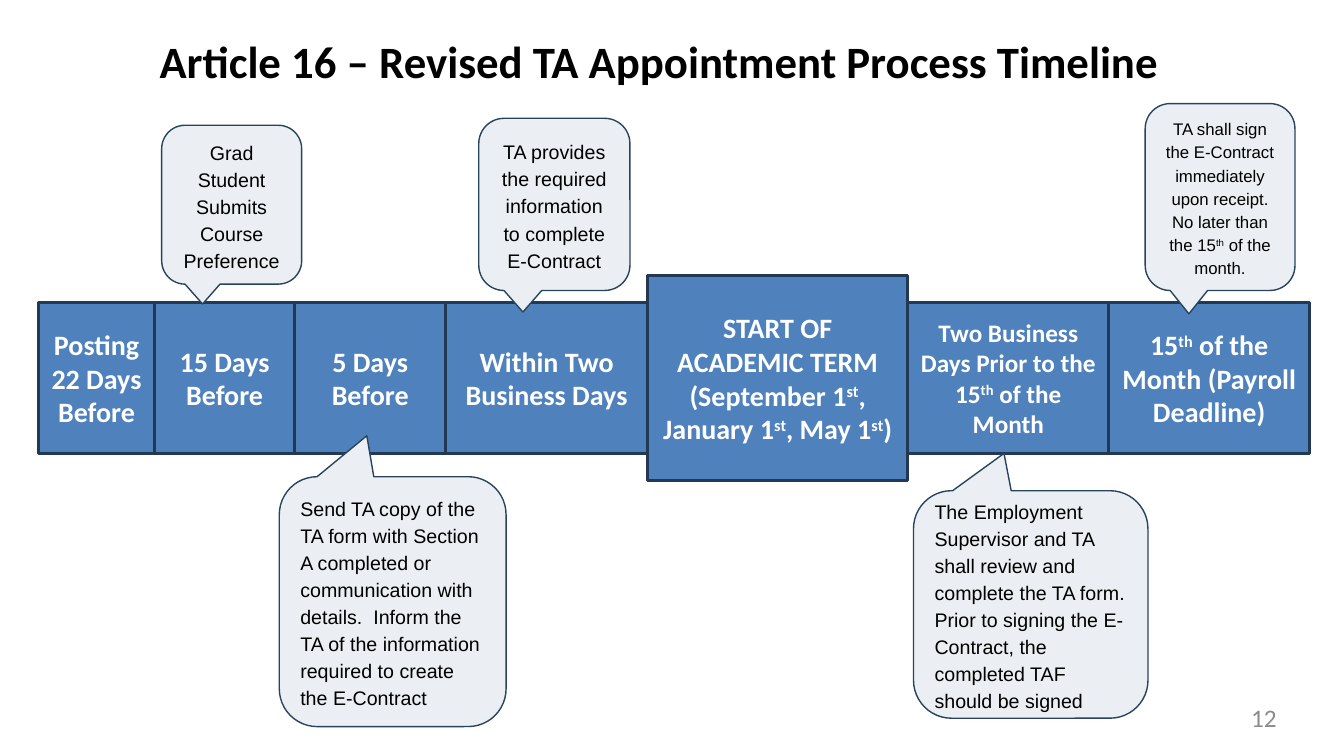
from pptx import Presentation
from pptx.dml.color import RGBColor
from pptx.enum import shapes, text
from pptx.util import Pt

COLORS = {
    "stage": "4F81BD", "stage_line": "233953", "stage_text": "FFFFFF",
    "callout": "EBEEF2", "callout_line": "28445D", "ink": "000000", "number": "8C8C8C",
}
ROW_LEFT, ROW_TOP, ROW_HEIGHT = 27.5, 216, 108
STAGES = [
    (83, 0, 20, ["Posting 22 Days Before"]),
    (100, 0, 20, ["15 Days Before"]),
    (108, 0, 20, ["5 Days Before"]),
    (144, 0, 20, ["Within Two Business Days"]),
    (186, 19, 20, ["START OF ACADEMIC TERM", "(September 1^st^, January 1^st^, May 1^st^)"]),
    (143.5, 0, 18, ["Two Business Days Prior to the 15^th^ of the Month"]),
    (143.5, 0, 20, ["15^th^ of the Month (Payroll Deadline)"]),
]
ABOVE, BELOW = (-0.208, 0.625, 0.167), (-0.114, -0.664, 0.167)
CENTER, LEFT = text.PP_ALIGN.CENTER, text.PP_ALIGN.LEFT
CALLOUTS = [
    ((115.5, 89.5, 100, 113.5), ABOVE, CENTER, 14, 8, "Grad Student Submits Course Preference"),
    ((199.5, 340.5, 162, 178.5), BELOW, LEFT, 14, 8,
     "Send TA copy of the TA form with Section A completed or communication with details.  "
     "Inform the TA of the information required to create the E-Contract"),
    ((342, 84.5, 108, 123), ABOVE, CENTER, 14, 10,
     "TA provides the required information to complete E-Contract"),
    ((652.5, 350.5, 167.5, 162.5), BELOW, LEFT, 14, 8,
     "The Employment Supervisor and TA shall review and complete the TA form. "
     "Prior to signing the E-Contract, the completed TAF should be signed"),
    ((818, 74, 107, 133.5), ABOVE, CENTER, 12, 8,
     "TA shall sign the E-Contract immediately upon receipt. "
     "No later than the 15^th^ of the month."),
]


def style_font(font, name, size, color, bold=False):
    """Set the face, size, colour and weight of a font."""
    font.name, font.size, font.bold = name, Pt(size), bold
    font.color.rgb = RGBColor.from_string(COLORS[color])


def write_paragraph(paragraph, content, alignment, *style):
    """Write text in which carets enclose superscripts."""
    paragraph.alignment = alignment
    for index, part in enumerate(content.split("^")):
        run = paragraph.add_run()
        run.text = part
        style_font(run.font, *style)
        if index % 2:
            run._r.get_or_add_rPr().set("baseline", "30000")


def add_box(slide, kind, box, fill, line, line_width):
    """Add a filled and outlined shape with its text in the middle."""
    shape = slide.shapes.add_shape(kind, *map(Pt, box))
    shape.shadow.inherit = False
    shape.fill.solid()
    shape.fill.fore_color.rgb = RGBColor.from_string(COLORS[fill])
    shape.line.color.rgb = RGBColor.from_string(COLORS[line])
    shape.line.width = Pt(line_width)
    shape.text_frame.word_wrap = True
    shape.text_frame.vertical_anchor = text.MSO_ANCHOR.MIDDLE
    return shape


def add_title(slide, box):
    """Place and format the title placeholder."""
    title = slide.shapes.title
    title.left, title.top, title.width, title.height = map(Pt, box)
    frame = title.text_frame
    frame.text = "Article 16 – Revised TA Appointment Process Timeline"
    frame.vertical_anchor = text.MSO_ANCHOR.MIDDLE
    frame.paragraphs[0].alignment = CENTER
    style_font(frame.paragraphs[0].runs[0].font, "Calibri", 32, "ink", True)


def add_timeline(slide, left, top, height):
    """Lay the stages side by side, the raised one taller than the row."""
    for width, rise, size, lines in STAGES:
        box = (left, top - rise, width, height + 2 * rise)
        stage = add_box(slide, shapes.MSO_SHAPE.RECTANGLE, box, "stage", "stage_line", 2)
        frame = stage.text_frame
        for index, line in enumerate(lines):
            paragraph = frame.add_paragraph() if index else frame.paragraphs[0]
            write_paragraph(paragraph, line, CENTER, "Calibri", size, "stage_text", True)
        left += width


def add_callout(slide, box, pointer, alignment, size, space_after, content):
    """Add a rounded callout that points at the timeline."""
    callout = add_box(slide, shapes.MSO_SHAPE.ROUNDED_RECTANGULAR_CALLOUT, box,
                      "callout", "callout_line", 1)
    for index, value in enumerate(pointer):
        callout.adjustments[index] = value
    paragraph = callout.text_frame.paragraphs[0]
    paragraph.line_spacing = 1.15
    paragraph.space_after = Pt(space_after)
    write_paragraph(paragraph, content, alignment, "Arial", size, "ink")


def add_page_number(slide, box):
    """Add the page number at the lower right."""
    frame = slide.shapes.add_textbox(*map(Pt, box)).text_frame
    frame.word_wrap = True
    frame.margin_left = frame.margin_right = frame.margin_top = frame.margin_bottom = 0
    write_paragraph(frame.paragraphs[0], "12", text.PP_ALIGN.RIGHT, "Calibri", 18, "number")


def main():
    """Build and save the slide."""
    presentation = Presentation()
    presentation.slide_width, presentation.slide_height = Pt(960), Pt(540)
    slide = presentation.slides.add_slide(presentation.slide_layouts[5])
    add_title(slide, (88, 20, 766, 46))
    add_timeline(slide, ROW_LEFT, ROW_TOP, ROW_HEIGHT)
    for callout in CALLOUTS:
        add_callout(slide, *callout)
    add_page_number(slide, (691, 502, 221, 27))
    presentation.save("out.pptx")


if __name__ == "__main__":
    main()
